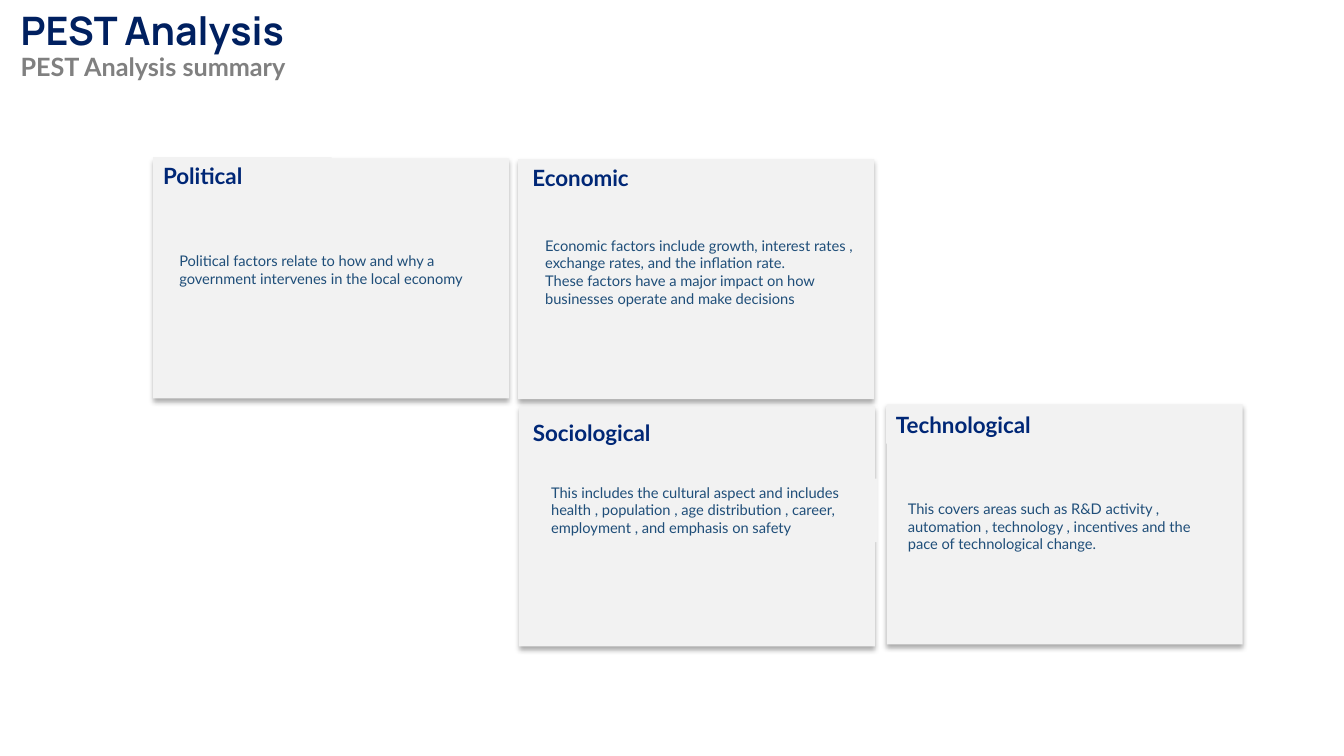
from pptx import Presentation
from pptx.dml.color import RGBColor
from pptx.enum.shapes import MSO_SHAPE as Shape
from pptx.enum.text import MSO_ANCHOR as Anchor, MSO_AUTO_SIZE as AutoSize, PP_ALIGN as Align
from pptx.oxml import parse_xml
from pptx.oxml.ns import nsdecls
from pptx.util import Cm, Pt

PANEL = "F2F2F2"
CARD_SIZE = (8.97, 6.05)
HEADING_SIZE = (4.5, 0.94)

TITLE = {"name": "Manrope", "size": Pt(28), "bold": True, "color": "002060"}
SUBTITLE = {"name": "Lato", "size": Pt(18), "bold": True, "color": "808080"}
HEADING = {"name": "Lato", "size": Pt(16), "bold": True, "color": "002776"}
BODY = {"name": "Lato", "size": Pt(10.5), "bold": False, "color": "1F4E79"}

# Heading, card corner, heading corner, body box, body paragraphs
FACTORS = [
    ("Political", (3.86, 3.99), (3.86, 3.96), (4.27, 6.22, 8.23, 1.14),
     ["Political factors relate to how and why a government intervenes "
      "in the local economy"]),
    ("Economic", (13.06, 4.01), (13.17, 4.01), (13.49, 5.84, 8.51, 2.06),
     ["Economic factors include growth, interest rates , exchange rates, "
      "and the inflation rate.",
      "These factors have a major impact on how businesses operate "
      "and make decisions"]),
    ("Technological", (22.35, 10.19), (22.33, 10.24), (22.63, 12.47, 8.41, 1.6),
     ["This covers areas such as R&D activity , automation , technology , "
      "incentives and the pace of technological change."]),
    ("Sociological", (13.08, 10.24), (13.18, 10.44), (13.64, 12.06, 8.48, 1.6),
     ["This includes the cultural aspect and includes health , population , "
      "age distribution , career, employment , and emphasis on safety"]),
]


def rgb(hex_code):
    return RGBColor.from_string(hex_code)


def write(frame, lines, spacing=1.0):
    """Fill a text frame with (text, format) lines."""
    frame.word_wrap = True
    frame.auto_size = AutoSize.SHAPE_TO_FIT_TEXT
    frame.vertical_anchor = Anchor.TOP
    for index, (text, look) in enumerate(lines):
        line = frame.add_paragraph() if index else frame.paragraphs[0]
        line.alignment = Align.LEFT
        line.line_spacing = spacing
        run = line.add_run()
        run.text = text
        for key, value in look.items():
            if key == "color":
                run.font.color.rgb = rgb(value)
            else:
                setattr(run.font, key, value)


def add_panel(slide, box):
    panel = slide.shapes.add_shape(Shape.RECTANGLE, *map(Cm, box))
    panel.shadow.inherit = False
    panel.fill.solid()
    panel.fill.fore_color.rgb = rgb(PANEL)
    panel.line.fill.background()
    return panel


def add_drop_shadow(panel):
    effects = panel._element.spPr.find(
        "{http://schemas.openxmlformats.org/drawingml/2006/main}effectLst")
    effects.append(parse_xml(
        f'<a:outerShdw {nsdecls("a")} blurRad="{Pt(3.5)}" dist="{Pt(2.2)}" '
        'dir="5400000" algn="t" rotWithShape="0"><a:srgbClr val="000000">'
        '<a:alpha val="32000"/></a:srgbClr></a:outerShdw>'))


def add_factor(slide, heading, card_at, heading_at, body_box, body):
    add_drop_shadow(add_panel(slide, card_at + CARD_SIZE))
    write(add_panel(slide, heading_at + HEADING_SIZE).text_frame, [(heading, HEADING)])
    write(add_panel(slide, body_box).text_frame, [(text, BODY) for text in body])


def add_title(slide):
    title = slide.shapes.add_textbox(Cm(0.27), Cm(0.18), Cm(12.45), Cm(2.24))
    write(title.text_frame,
          [("PEST Analysis", TITLE), ("PEST Analysis summary", SUBTITLE)], 0.9)


def main():
    deck = Presentation()
    deck.slide_width, deck.slide_height = Cm(33.87), Cm(19.05)
    slide = deck.slides.add_slide(deck.slide_layouts[6])

    # Four factor cards
    for factor in FACTORS:
        add_factor(slide, *factor)

    # Title and subtitle
    add_title(slide)
    deck.save("out.pptx")


if __name__ == "__main__":
    main()
